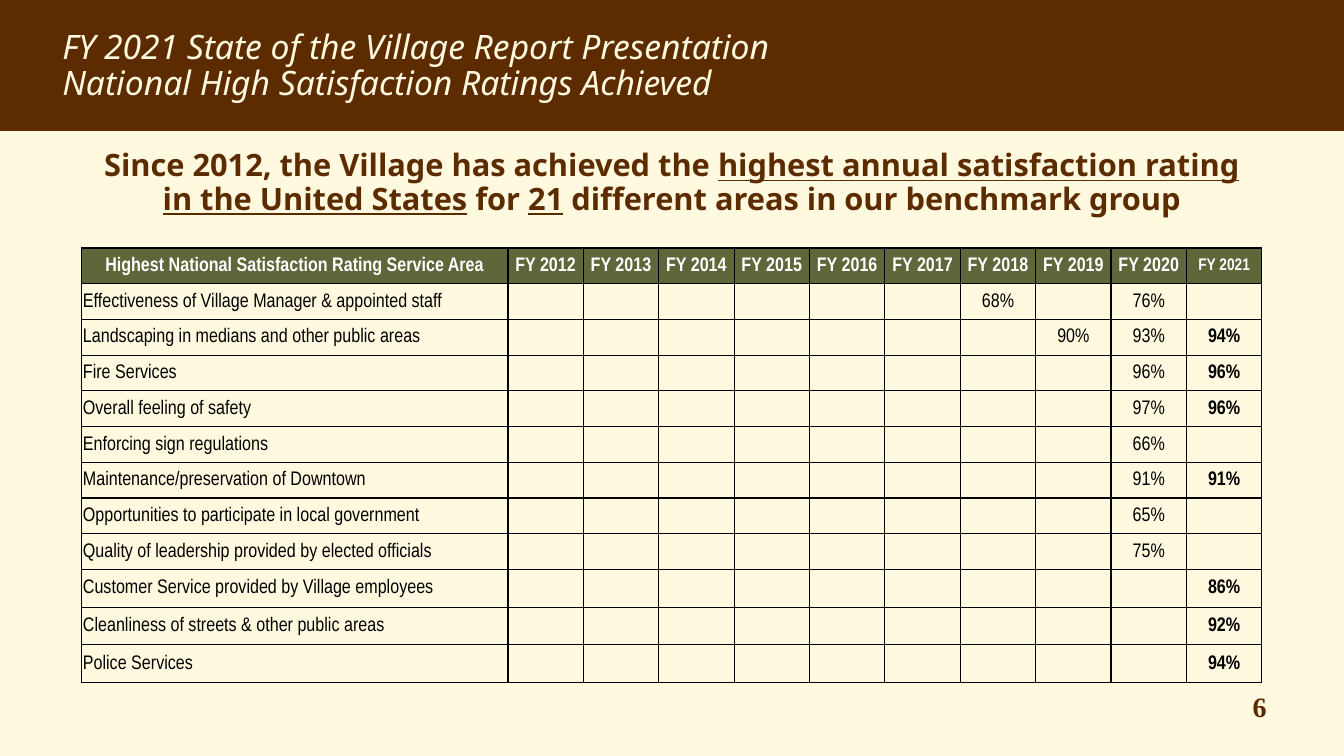
"""Build the slide of national high satisfaction ratings by service area."""
import dataclasses
import typing

import lxml.etree
import pptx
import pptx.dml.color
import pptx.enum.shapes
import pptx.enum.text
import pptx.oxml.ns
import pptx.util

Cm = pptx.util.Cm
Align = pptx.enum.text.PP_ALIGN
COLORS = {"brown": "5D2B00", "cream": "FFF9DF", "olive": "5E663A", "white": "FFFFFF", "black": "000000"}
YEARS = range(2012, 2022)
LATEST_YEAR = 2021
AREA_WIDTH, YEAR_WIDTH = 10.74, 1.9
ROW_HEIGHT, TALL_ROW_HEIGHT, TALL_ROWS = 0.9, 0.95, 3


@dataclasses.dataclass(frozen=True)
class TextBox:
    """A text box in centimetres, with runs of text and underline by paragraph."""
    left: float
    top: float
    width: float
    height: float
    paragraphs: list[list[tuple[str, bool]]]
    style: dict[str, typing.Any]
    align: Align = Align.LEFT
    line_spacing: float = 1.0


@dataclasses.dataclass(frozen=True)
class ServiceArea:
    """A service area and its ratings in percent by fiscal year."""
    name: str
    ratings: dict[int, int]


TEXT_BOXES = [
    TextBox(31.32, 17.25, 1.75, 1.12, [[("6", False)]],
            {"font": "Times New Roman", "size": 20, "color": "brown", "bold": True}),
    TextBox(1.32, 0.64, 30.96, 2.31,
            [[("FY 2021 State of the Village Report Presentation", False)],
             [("National High Satisfaction Ratings Achieved", False)]],
            {"font": "Noto Sans", "size": 24, "color": "cream", "italic": True}, line_spacing=0.9),
    TextBox(2.06, 3.66, 29.74, 2.13,
            [[("Since 2012, the Village has achieved the ", False),
              ("highest annual satisfaction rating in the United States", True),
              (" for ", False), ("21", True),
              (" different areas in our benchmark group", False)]],
            {"font": "Noto Sans", "size": 22, "color": "brown", "bold": True}, Align.CENTER, 0.9),
]
SERVICE_AREAS = [
    ServiceArea("Effectiveness of Village Manager & appointed staff", {2018: 68, 2020: 76}),
    ServiceArea("Landscaping in medians and other public areas", {2019: 90, 2020: 93, 2021: 94}),
    ServiceArea("Fire Services", {2020: 96, 2021: 96}),
    ServiceArea("Overall feeling of safety", {2020: 97, 2021: 96}),
    ServiceArea("Enforcing sign regulations", {2020: 66}),
    ServiceArea("Maintenance/preservation of Downtown", {2020: 91, 2021: 91}),
    ServiceArea("Opportunities to participate in local government", {2020: 65}),
    ServiceArea("Quality of leadership provided by elected officials", {2020: 75}),
    ServiceArea("Customer Service provided by Village employees", {2021: 86}),
    ServiceArea("Cleanliness of streets & other public areas", {2021: 92}),
    ServiceArea("Police Services", {2021: 94}),
]


def rgb(name: str) -> pptx.dml.color.RGBColor:
    """Return the named colour."""
    return pptx.dml.color.RGBColor.from_string(COLORS[name])


def add_text(paragraph: typing.Any, text: str, *, font: str = "Arial Narrow", size: float = 14,
             color: str = "black", bold: bool = False, italic: bool = False,
             underline: bool = False) -> None:
    """Add a formatted run to a paragraph."""
    run = paragraph.add_run()
    run.text = text
    run.font.name, run.font.size = font, pptx.util.Pt(size)
    run.font.bold, run.font.italic, run.font.underline = bold, italic, underline
    run.font.color.rgb = rgb(color)


def add_banner(slide: typing.Any, width: int) -> None:
    """Add the dark band across the top."""
    banner = slide.shapes.add_shape(pptx.enum.shapes.MSO_SHAPE.RECTANGLE, 0, 0, width, Cm(3.3))
    banner.shadow.inherit = False
    banner.fill.solid()
    banner.fill.fore_color.rgb = rgb("brown")
    banner.line.fill.background()


def add_text_box(slide: typing.Any, box: TextBox) -> None:
    """Add a wrapped text box."""
    shape = slide.shapes.add_textbox(Cm(box.left), Cm(box.top), Cm(box.width), Cm(box.height))
    frame = shape.text_frame
    frame.word_wrap = True
    for index, runs in enumerate(box.paragraphs):
        paragraph = frame.add_paragraph() if index else frame.paragraphs[0]
        paragraph.alignment, paragraph.line_spacing = box.align, box.line_spacing
        for text, underline in runs:
            add_text(paragraph, text, underline=underline, **box.style)


def add_borders(cell: typing.Any) -> None:
    """Draw a thin black border on all sides of a cell."""
    qualify = pptx.oxml.ns.qn
    properties = cell._tc.get_or_add_tcPr()
    for position, side in enumerate(("a:lnL", "a:lnR", "a:lnT", "a:lnB")):
        line = lxml.etree.Element(qualify(side), w=str(pptx.util.Pt(1)))
        fill = lxml.etree.SubElement(line, qualify("a:solidFill"))
        lxml.etree.SubElement(fill, qualify("a:srgbClr"), val=COLORS["black"])
        properties.insert(position, line)


def fill_cell(cell: typing.Any, text: str, align: Align, fill: str | None = None,
              **style: typing.Any) -> None:
    """Set the text, fill, margins and borders of a cell."""
    cell.margin_left = cell.margin_right = cell.margin_top = Cm(0.03)
    cell.margin_bottom = 0
    cell.vertical_anchor = pptx.enum.text.MSO_ANCHOR.MIDDLE
    if fill:
        cell.fill.solid()
        cell.fill.fore_color.rgb = rgb(fill)
    else:
        cell.fill.background()
    paragraph = cell.text_frame.paragraphs[0]
    paragraph.alignment = align
    if text:
        add_text(paragraph, text, **style)
    add_borders(cell)


def add_ratings_table(slide: typing.Any) -> None:
    """Add the table of ratings, one service area a row."""
    row_count = len(SERVICE_AREAS) + 1
    heights = [ROW_HEIGHT] * (row_count - TALL_ROWS) + [TALL_ROW_HEIGHT] * TALL_ROWS
    widths = [AREA_WIDTH] + [YEAR_WIDTH] * len(YEARS)
    table = slide.shapes.add_table(row_count, len(widths), Cm(2.06), Cm(6.25),
                                   Cm(sum(widths)), Cm(sum(heights))).table
    table.first_row = table.horz_banding = False
    for column, width in zip(table.columns, widths):
        column.width = Cm(width)
    for row, height in zip(table.rows, heights):
        row.height = Cm(height)

    headings = ["Highest National Satisfaction Rating Service Area", *(f"FY {year}" for year in YEARS)]
    for index, heading in enumerate(headings):
        size = 12 if heading == f"FY {LATEST_YEAR}" else 14
        fill_cell(table.cell(0, index), heading, Align.CENTER, "olive",
                  size=size, color="white", bold=True)
    for row_index, area in enumerate(SERVICE_AREAS, 1):
        fill_cell(table.cell(row_index, 0), area.name, Align.LEFT)
        for column_index, year in enumerate(YEARS, 1):
            rating = f"{area.ratings[year]}%" if year in area.ratings else ""
            fill_cell(table.cell(row_index, column_index), rating, Align.CENTER,
                      bold=year == LATEST_YEAR)


def main() -> None:
    """Build and save the presentation."""
    presentation = pptx.Presentation()
    presentation.slide_width, presentation.slide_height = Cm(33.87), Cm(19.05)
    slide = presentation.slides.add_slide(presentation.slide_layouts[6])
    slide.background.fill.solid()
    slide.background.fill.fore_color.rgb = rgb("cream")
    add_banner(slide, presentation.slide_width)
    for box in TEXT_BOXES:
        add_text_box(slide, box)
    add_ratings_table(slide)
    presentation.save("out.pptx")


if __name__ == "__main__":
    main()
